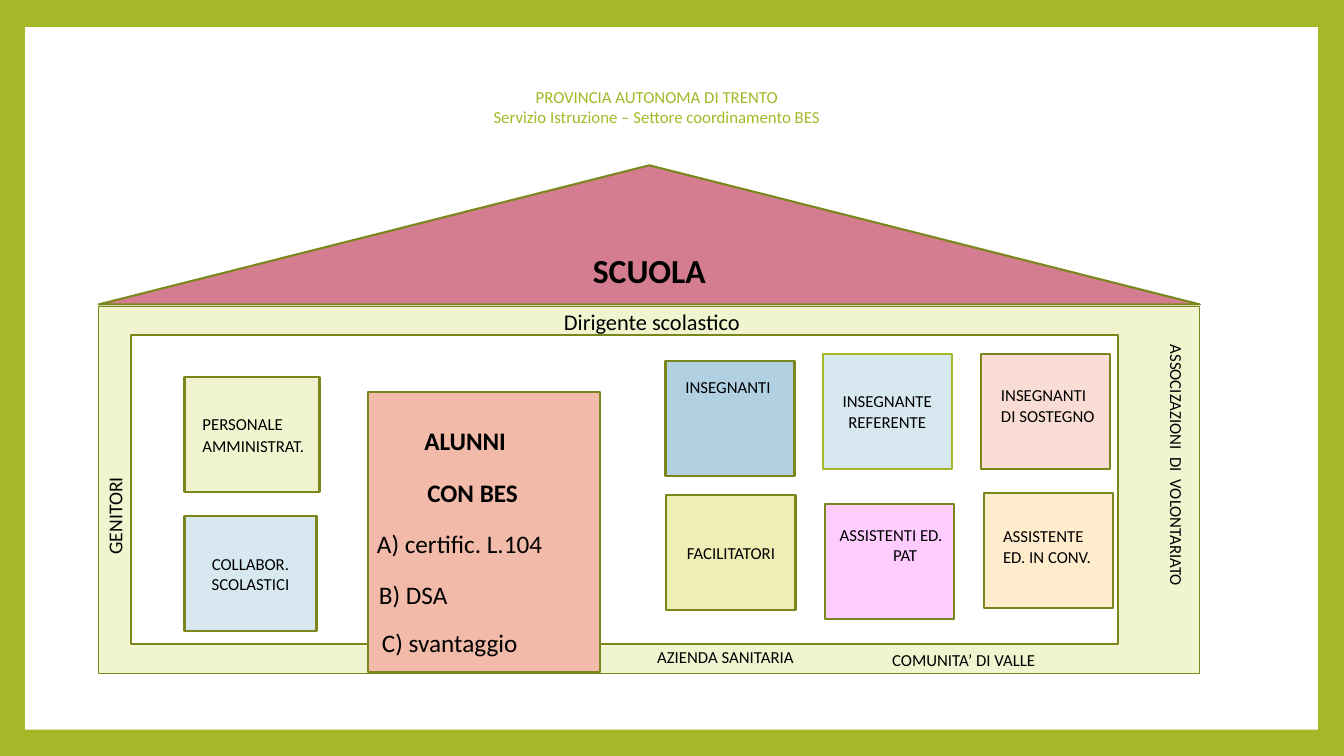
from pptx import Presentation
from pptx.dml.color import RGBColor
from pptx.enum.shapes import MSO_SHAPE
from pptx.enum.text import MSO_ANCHOR, MSO_AUTO_SIZE, PP_ALIGN
from pptx.oxml.xmlchemy import OxmlElement
from pptx.util import Pt

RECT, TRIANGLE = MSO_SHAPE.RECTANGLE, MSO_SHAPE.ISOSCELES_TRIANGLE
LEFT, CENTER = PP_ALIGN.LEFT, PP_ALIGN.CENTER
TOP, MIDDLE = MSO_ANCHOR.TOP, MSO_ANCHOR.MIDDLE
NO_FIT = MSO_AUTO_SIZE.NONE

PX = 9144  # 100 px to the inch
LIME, OLIVE, BLACK, WHITE = "A6B727", "7B871D", "000000", "FFFFFF"
PALE_LIME, PALE_BLUE = "F0F5D0", "D8E8F1"


def px(*values):
    return [v * PX for v in values]


def rgb(color):
    return RGBColor.from_string(color)


def write(tf, *lines, size=12, color=BLACK, bold=False, align=LEFT,
          anchor=TOP, indents=(), gap_size=None, spacing=None):
    """Fill a text frame; gap_size enlarges the first space of each line."""
    tf.word_wrap = True
    tf.auto_size = NO_FIT
    tf.vertical_anchor = anchor
    for i, line in enumerate(lines):
        p = tf.paragraphs[0] if i == 0 else tf.add_paragraph()
        p.alignment = align
        p.space_before = Pt(0)
        if spacing:
            p.line_spacing = spacing
        if indents:
            pPr = p._p.get_or_add_pPr()
            pPr.set("marL", str(indents[i] * PX))
            pPr.set("indent", "0")
            pPr.append(OxmlElement("a:buNone"))
        first, gap, rest = line.partition(" ")
        runs = [(first, size), (gap, gap_size), (rest, size)] if gap_size else [(line, size)]
        for text, points in runs:
            r = p.add_run()
            r.text = text
            r.font.name = "Calibri"
            r.font.size = Pt(points)
            r.font.bold = bold
            r.font.color.rgb = rgb(color)


class Diagram:
    def __init__(self, prs, layout):
        self.layout = layout
        self.s = prs.slides.add_slide(layout)

    def paint(self, sp, fill, line=OLIVE, weight=1.5):
        sp.fill.solid()
        sp.fill.fore_color.rgb = rgb(fill)
        if line:
            sp.line.color.rgb = rgb(line)
            sp.line.width = Pt(weight)
        else:
            sp.line.fill.background()

    def frame(self, box, color):
        """White panel on a coloured background, held by the layout."""
        bg = self.layout.background.fill
        bg.solid()
        bg.fore_color.rgb = rgb(color)
        sp = self.shape(box, WHITE, line=None)
        self.layout.shapes._spTree.insert(2, sp._element)

    def placeholder(self, sp, box, *lines, **style):
        sp.left, sp.top, sp.width, sp.height = px(*box)
        write(sp.text_frame, *lines, **style)
        return sp

    def shape(self, box, fill, *lines, kind=RECT, line=OLIVE, **style):
        sp = self.s.shapes.add_shape(kind, *px(*box))
        sp.shadow.inherit = False
        self.paint(sp, fill, line)
        if lines:
            write(sp.text_frame, *lines, align=CENTER, anchor=MIDDLE, **style)
        return sp

    def label(self, box, *lines, rotation=0, **style):
        sp = self.s.shapes.add_textbox(*px(*box))
        sp.rotation = rotation
        write(sp.text_frame, *lines, **style)


def main():
    prs = Presentation()
    prs.slide_width, prs.slide_height = px(1333, 750)
    d = Diagram(prs, prs.slide_layouts[1])
    d.frame((25, 27, 1282, 697), LIME)

    # Heading and house walls
    title, body = d.s.placeholders
    d.placeholder(title, (318, 81, 667, 50), "PROVINCIA AUTONOMA DI TRENTO",
                  "Servizio Istruzione – Settore coordinamento BES",
                  color=LIME, align=CENTER)
    walls = d.placeholder(body, (98, 304, 1092, 364), "Dirigente scolastico",
                          size=16, align=CENTER, indents=(5,), spacing=0.9)
    d.paint(walls, PALE_LIME, "7D891D", 0.75)

    # Roof and inner room
    d.shape((98, 164, 1092, 138), "D57D90", "SCUOLA", kind=TRIANGLE, size=24, bold=True)
    d.shape((130, 332, 979, 307), WHITE)

    # School staff
    d.shape((183, 374, 134, 114), PALE_LIME)
    d.label((191, 397, 137, 61), "PERSONALE AMMINISTRAT.", gap_size=18)
    d.shape((183, 512, 131, 114), PALE_BLUE, "COLLABOR. SCOLASTICI")

    # Teachers and assistants
    for left, top, fill, line, text in [
        (660, 358, "B1D1E3", OLIVE, None),
        (816, 351, PALE_BLUE, LIME, "INSEGNANTE REFERENTE"),
        (973, 351, "F9DDD4", OLIVE, None),
        (661, 491, "EFEEB5", OLIVE, "FACILITATORI"),
        (818, 500, "FFCCFF", OLIVE, None),
        (976, 489, "FFECCC", OLIVE, None),
    ]:
        d.shape((left, top, 128, 114), fill, *([text] if text else []), line=line)
    d.label((670, 369, 114, 30), "INSEGNANTI")
    d.label((983, 368, 114, 81), "INSEGNANTI DI SOSTEGNO", gap_size=18)
    d.label((823, 516, 138, 50), "ASSISTENTI ED.", "PAT", indents=(0, 53))
    d.label((985, 517, 124, 50), "ASSISTENTE ED. IN CONV.")

    # Pupils
    d.shape((365, 389, 230, 278), "F2BAA9")
    d.label((411, 417, 134, 40), "ALUNNI", size=18, bold=True)
    d.label((369, 469, 213, 40), "CON BES", size=18, bold=True, indents=(45,))
    for left, top, text in [(364, 519, "A) certific. L.104"),
                            (366, 570, "B) DSA"),
                            (369, 617, "C) svantaggio")]:
        d.label((left, top, 218, 40), text, size=18)

    # Partners around the room
    d.label((18, 447, 192, 34), "GENITORI", rotation=270, size=14)
    d.label((1013, 471, 308, 30), "ASSOCIZAZIONI  DI  VOLONTARIATO", rotation=90)
    d.label((642, 637, 173, 30), "AZIENDA SANITARIA")
    d.label((875, 640, 274, 30), "COMUNITA’ DI VALLE")

    prs.save("out.pptx")


if __name__ == "__main__":
    main()
